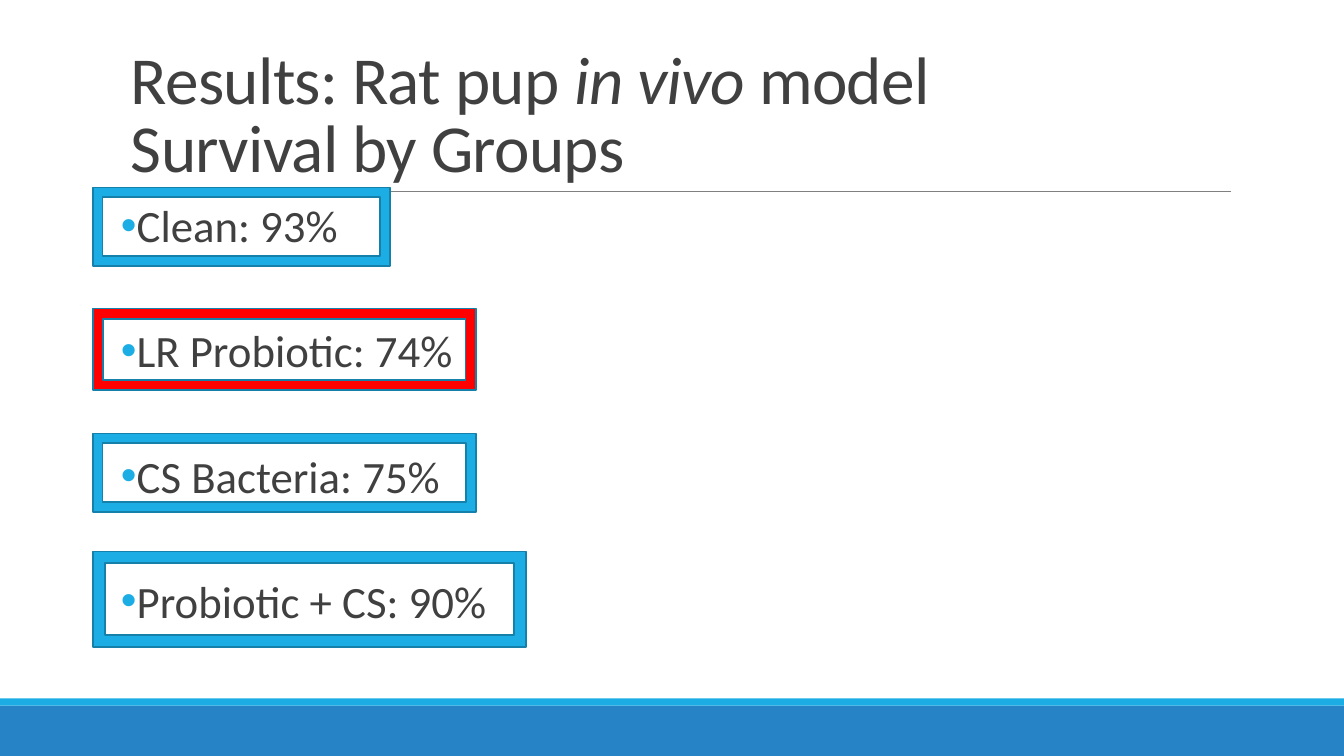
from lxml.etree import SubElement
from pptx import Presentation
from pptx.dml.color import RGBColor
from pptx.enum.shapes import MSO_CONNECTOR as CONNECTOR, MSO_SHAPE as SHAPE
from pptx.enum.text import MSO_ANCHOR as ANCHOR
from pptx.oxml.ns import qn
from pptx.util import Inches, Pt

COLORS = {
    "text": "404040",
    "sky": "1CADE4",
    "blue": "2683C6",
    "edge": "1580A9",
    "red": "FF0000",
    "rule": "808080",
}


def color(name):
    return RGBColor.from_string(COLORS[name])


def add_run(paragraph, text, size, italic=False, tracking=None):
    """Add a run of text in the slide's font."""
    run = paragraph.add_run()
    run.text = text
    font = run.font
    font.name, font.size, font.italic = "Calibri", Pt(size), italic
    font.color.rgb = color("text")
    if tracking is not None:
        run._r.get_or_add_rPr().set("spc", str(int(tracking * 100)))


class SlideBuilder:
    def __init__(self, slide):
        self.slide = slide

    def shape(self, kind, box, fill, line=None):
        shape = self.slide.shapes.add_shape(kind, *map(Inches, box))
        shape.shadow.inherit = False
        shape.fill.solid()
        shape.fill.fore_color.rgb = color(fill)
        if line:
            shape.line.color.rgb = color(line)
            shape.line.width = Pt(1.25)
        else:
            shape.line.fill.background()

    def rule(self, left, right, top):
        line = self.slide.shapes.add_connector(
            CONNECTOR.STRAIGHT, Inches(left), Inches(top), Inches(right), Inches(top))
        line.line.color.rgb = color("rule")
        line.line.width = Pt(0.5)
        SubElement(line._element.spPr, qn("a:effectLst"))

    def text_box(self, box, anchor=ANCHOR.TOP, side=0.1):
        frame = self.slide.shapes.add_textbox(*map(Inches, box)).text_frame
        frame.word_wrap = True
        frame.vertical_anchor = anchor
        frame.margin_left = frame.margin_right = Inches(side)
        return frame

    def title(self, box, lines, size):
        paragraph = self.text_box(box, ANCHOR.BOTTOM).paragraphs[0]
        paragraph.line_spacing = 0.85
        for index, line in enumerate(lines):
            if index:
                paragraph.add_line_break()
            for text, italic in line:
                add_run(paragraph, text, size, italic, tracking=-0.5)

    def bullets(self, box, items, size, gap):
        frame = self.text_box(box, side=0)
        for index, item in enumerate(items):
            paragraph = frame.add_paragraph() if index else frame.paragraphs[0]
            paragraph.line_spacing = 0.8
            paragraph.space_before = Pt(gap if index else 0)
            properties = paragraph._p.get_or_add_pPr()
            properties.set("marL", str(Inches(0.1)))
            properties.set("indent", str(-Inches(0.1)))
            bullet_color = SubElement(properties, qn("a:buClr"))
            SubElement(bullet_color, qn("a:srgbClr"), val=COLORS["sky"])
            SubElement(properties, qn("a:buFont"), typeface="Arial")
            SubElement(properties, qn("a:buChar"), char="•")
            add_run(paragraph, item, size)


def main():
    presentation = Presentation()
    presentation.slide_width = Inches(13.33)
    presentation.slide_height = Inches(7.5)
    builder = SlideBuilder(presentation.slides.add_slide(presentation.slide_layouts[6]))

    # Footer bands and title rule
    builder.shape(SHAPE.RECTANGLE, (0, 7, 13.33, 0.5), "blue")
    builder.shape(SHAPE.RECTANGLE, (0, 6.93, 13.33, 0.07), "sky")
    builder.rule(1.31, 12.21, 1.9)

    # Title
    builder.title((1.2, 0.31, 11, 1.59), [
        [("Results: Rat pup ", False), ("in vivo ", True), ("model", False)],
        [("Survival by Groups", False)],
    ], size=48)

    # Survival by group: text, then top, width, height and colour of its frame
    groups = [
        ("Clean: 93%", 1.86, 2.95, 0.78, "sky"),
        ("LR Probiotic: 74%", 3.06, 3.8, 0.81, "red"),
        ("CS Bacteria: 75%", 4.3, 3.8, 0.78, "sky"),
        ("Probiotic + CS: 90%", 5.47, 4.3, 0.95, "sky"),
    ]
    builder.bullets((1.2, 2.02, 11, 4.4), [group[0] for group in groups], size=32, gap=58.6)
    for _, top, width, height, fill in groups:
        builder.shape(SHAPE.FRAME, (0.92, top, width, height), fill, line="edge")

    presentation.save("out.pptx")


if __name__ == "__main__":
    main()
